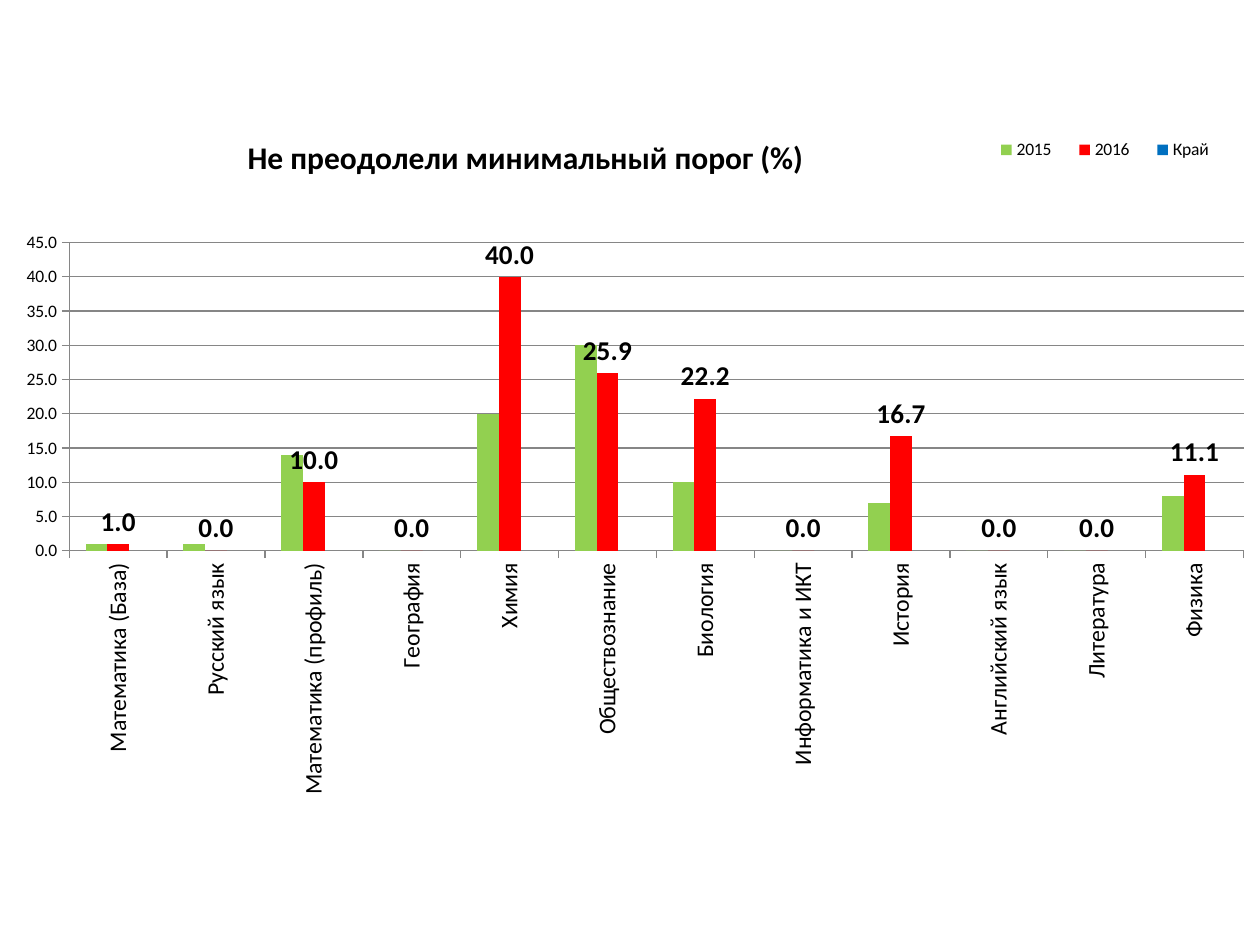
"""Build a slide with a clustered column chart of exam threshold failures."""
from pptx import Presentation
from pptx.chart.data import CategoryChartData
from pptx.dml.color import RGBColor as RGB
from pptx.enum.chart import XL_CHART_TYPE as CT, XL_LABEL_POSITION as LP
from pptx.enum.chart import XL_LEGEND_POSITION as LEG, XL_TICK_MARK as TM
from pptx.oxml.ns import qn
from pptx.util import Pt
from lxml import etree

COLORS = {"2015": "92D050", "2016": "FF0000", "Край": "0070C0",
          "text": "000000", "line": "868686"}
FAILURES = [
    ("Математика (База)", 1, 1), ("Русский язык", 1, 0),
    ("Математика (профиль)", 14, 10), ("География", 0, 0),
    ("Химия", 20, 40), ("Обществознание", 30, 25.9),
    ("Биология", 10, 22.2), ("Информатика и ИКТ", 0, 0),
    ("История", 7, 16.7), ("Английский язык", 0, 0),
    ("Литература", 0, 0), ("Физика", 8, 11.1),
]


def set_font(font, **values):
    font.color.rgb = RGB.from_string(COLORS["text"])
    for name, value in {"name": "Calibri", "bold": False, **values}.items():
        setattr(font, name, value)


def set_layout(parent, index, **values):
    for old in parent.findall(qn("c:layout")):
        parent.remove(old)
    layout = etree.Element(qn("c:layout"))
    manual = etree.SubElement(layout, qn("c:manualLayout"))
    for tag, value in values.items():
        etree.SubElement(manual, qn(f"c:{tag}")).set("val", str(value))
    parent.insert(index, layout)


prs = Presentation()
prs.slide_width, prs.slide_height = Pt(720), Pt(540)
s = prs.slides.add_slide(prs.slide_layouts[6])

subjects, failed_2015, failed_2016 = zip(*FAILURES)
data = CategoryChartData(number_format="0.0")
data.categories = subjects
data.add_series("2015", failed_2015)
data.add_series("2016", failed_2016)
data.add_series("Край", [None] * len(subjects))
chart = s.shapes.add_chart(CT.COLUMN_CLUSTERED, 0, Pt(54.7), Pt(720), Pt(430.6), data).chart
set_font(chart.font, size=Pt(10))

chart.has_title = True
tf = chart.chart_title.text_frame
tf.text = "Не преодолели минимальный порог (%)"
set_font(tf.paragraphs[0].runs[0].font, size=Pt(18), bold=True)

chart.has_legend = True
chart.legend.position = LEG.TOP
chart.legend.include_in_layout = False
set_font(chart.legend.font, size=Pt(10))

plot = chart.plots[0]
plot.gap_width, plot.overlap, plot.vary_by_categories = 150, 0, False
for series in plot.series:
    series.format.fill.solid()
    series.format.fill.fore_color.rgb = RGB.from_string(COLORS[series.name])
    series.invert_if_negative = False

labels = plot.series[1].data_labels
for name, value in {"show_value": True, "position": LP.OUTSIDE_END,
                    "number_format": "0.0", "number_format_is_linked": False}.items():
    setattr(labels, name, value)
set_font(labels.font, size=Pt(15.5), bold=True)

for axis, size in ((chart.category_axis, 13.6), (chart.value_axis, 10)):
    axis.major_tick_mark, axis.minor_tick_mark = TM.OUTSIDE, TM.NONE
    set_font(axis.tick_labels.font, size=Pt(size))
    axis.format.line.color.rgb = RGB.from_string(COLORS["line"])
    axis.format.line.width = Pt(0.75)
chart.category_axis._element.find(qn("c:txPr")).find(qn("a:bodyPr")).set("rot", "-5400000")

axis = chart.value_axis
axis.minimum_scale, axis.maximum_scale, axis.major_unit = 0, 45, 5
axis.has_major_gridlines = True
axis.major_gridlines.format.line.color.rgb = RGB.from_string(COLORS["line"])
axis.major_gridlines.format.line.width = Pt(0.75)
axis.tick_labels.number_format = "0.0"
axis.tick_labels.number_format_is_linked = False

root = chart._chartSpace.find(qn("c:chart"))
edge = {"xMode": "edge", "yMode": "edge"}
set_layout(root.find(qn("c:title")), 1, **edge, x=0.192, y=0.045)
set_layout(root.find(qn("c:plotArea")), 0, layoutTarget="inner", **edge,
           x=0.055, y=0.195, w=0.932, h=0.409)
set_layout(root.find(qn("c:legend")), 1, **edge, x=0.777, y=0.052, w=0.2, h=0.04)

prs.save("out.pptx")
